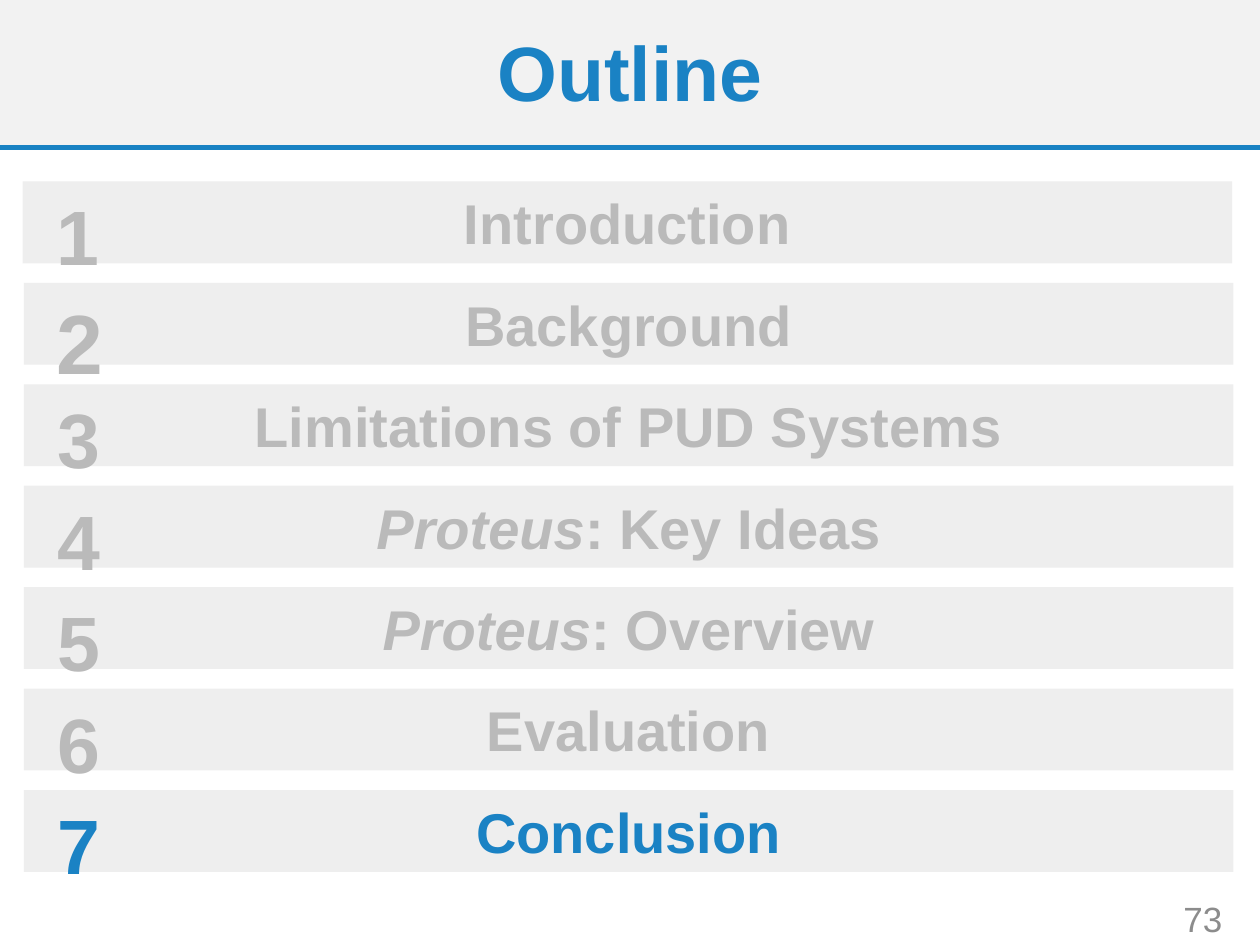
from lxml import etree
from pptx import Presentation
from pptx.dml.color import RGBColor
from pptx.enum.shapes import MSO_CONNECTOR, MSO_SHAPE
from pptx.enum.text import MSO_ANCHOR, PP_ALIGN
from pptx.oxml.ns import qn
from pptx.util import Inches, Pt

RECTANGLE = MSO_SHAPE.RECTANGLE
STRAIGHT = MSO_CONNECTOR.STRAIGHT
MIDDLE, TOP = MSO_ANCHOR.MIDDLE, MSO_ANCHOR.TOP
CENTER, RIGHT = PP_ALIGN.CENTER, PP_ALIGN.RIGHT

COLORS = {
    "header": "F2F2F2",
    "rule": "1982C3",
    "accent": "1A82C4",
    "bar": "EEEEEE",
    "muted": "BABABA",
    "page": "8C8C8C",
}
SECTIONS = [
    ["Introduction"],
    ["Background"],
    ["Limitations of PUD Systems"],
    ["Proteus", ": Key Ideas"],
    ["Proteus", ": Overview"],
    ["Evaluation"],
    ["Conclusion"],
]
CURRENT = 7
BAR_TOP, BAR_STEP, BAR_HEIGHT = 1.44, 0.805, 0.65


def write_text(shape, parts, size, color, bold=True, align=CENTER, anchor=MIDDLE):
    frame = shape.text_frame
    frame.word_wrap = True
    frame.vertical_anchor = anchor
    paragraph = frame.paragraphs[0]
    paragraph.alignment = align
    for index, part in enumerate(parts):
        run = paragraph.add_run()
        run.text = part
        run.font.name = "Arial"
        run.font.size = Pt(size)
        run.font.bold = bold
        run.font.italic = len(parts) > 1 and index == 0
        run.font.color.rgb = RGBColor.from_string(COLORS[color])


def add_panel(shapes, left, top, width, height, color):
    panel = shapes.add_shape(RECTANGLE, Inches(left), Inches(top), Inches(width), Inches(height))
    panel.shadow.inherit = False
    panel.fill.solid()
    panel.fill.fore_color.rgb = RGBColor.from_string(COLORS[color])
    panel.line.fill.background()
    return panel


presentation = Presentation()
presentation.slide_width = Inches(10)
presentation.slide_height = Inches(7.5)
slide = presentation.slides.add_slide(presentation.slide_layouts[5])

title = slide.shapes.title
title.left, title.top = Inches(0), Inches(0)
title.width, title.height = Inches(10), Inches(1.21)
write_text(title, ["Outline"], 44, "accent")
title.text_frame.paragraphs[0].line_spacing = 0.9

header = add_panel(slide.shapes, 0, 0, 10, 1.17, "header")
rule = slide.shapes.add_connector(STRAIGHT, Inches(0), Inches(1.17), Inches(10), Inches(1.17))
rule.line.color.rgb = RGBColor.from_string(COLORS["rule"])
rule.line.width = Pt(3)
etree.SubElement(rule.element.spPr, qn("a:effectLst"))
for backdrop in (header, rule):
    title.element.addprevious(backdrop.element)

page_number = slide.shapes.add_textbox(Inches(8.72), Inches(7.09), Inches(1.08), Inches(0.4))
write_text(page_number, ["73"], 20, "page", bold=False, align=RIGHT)

for number, parts in enumerate(SECTIONS, start=1):
    left = 0.18 if number == 1 else 0.19
    top = BAR_TOP + (number - 1) * BAR_STEP
    color = "accent" if number == CURRENT else "muted"
    group = slide.shapes.add_group_shape()
    bar = add_panel(group.shapes, left, top, 9.6, BAR_HEIGHT, "bar")
    write_text(bar, parts, 32, color)

    label = group.shapes.add_textbox(Inches(left), Inches(top), Inches(0.88), Inches(BAR_HEIGHT))
    write_text(label, [str(number)], 48 if number == 2 else 44, color, anchor=TOP)
    label.text_frame.margin_top = Inches(0.06)
    label.text_frame.margin_bottom = Inches(0)

presentation.save("out.pptx")
